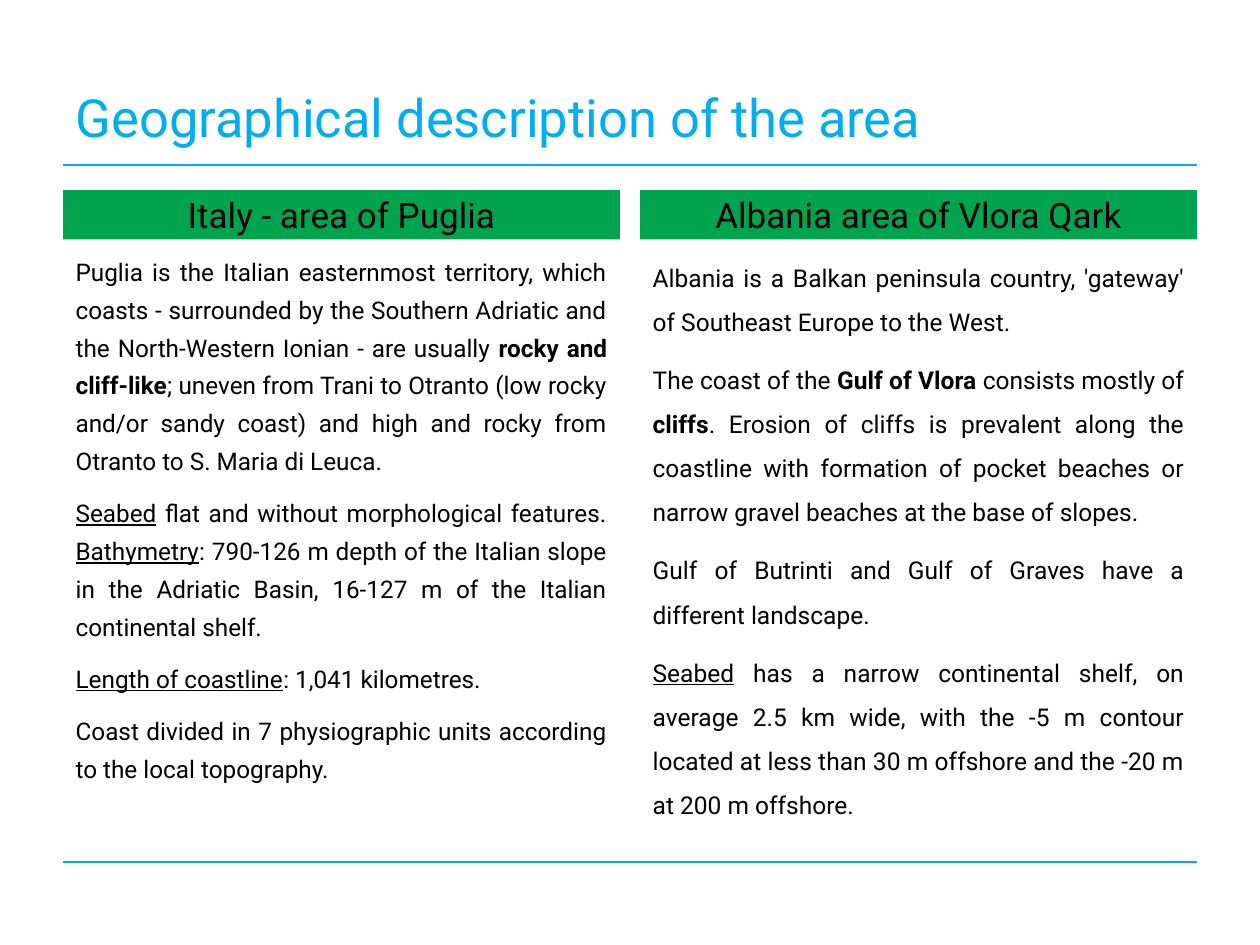
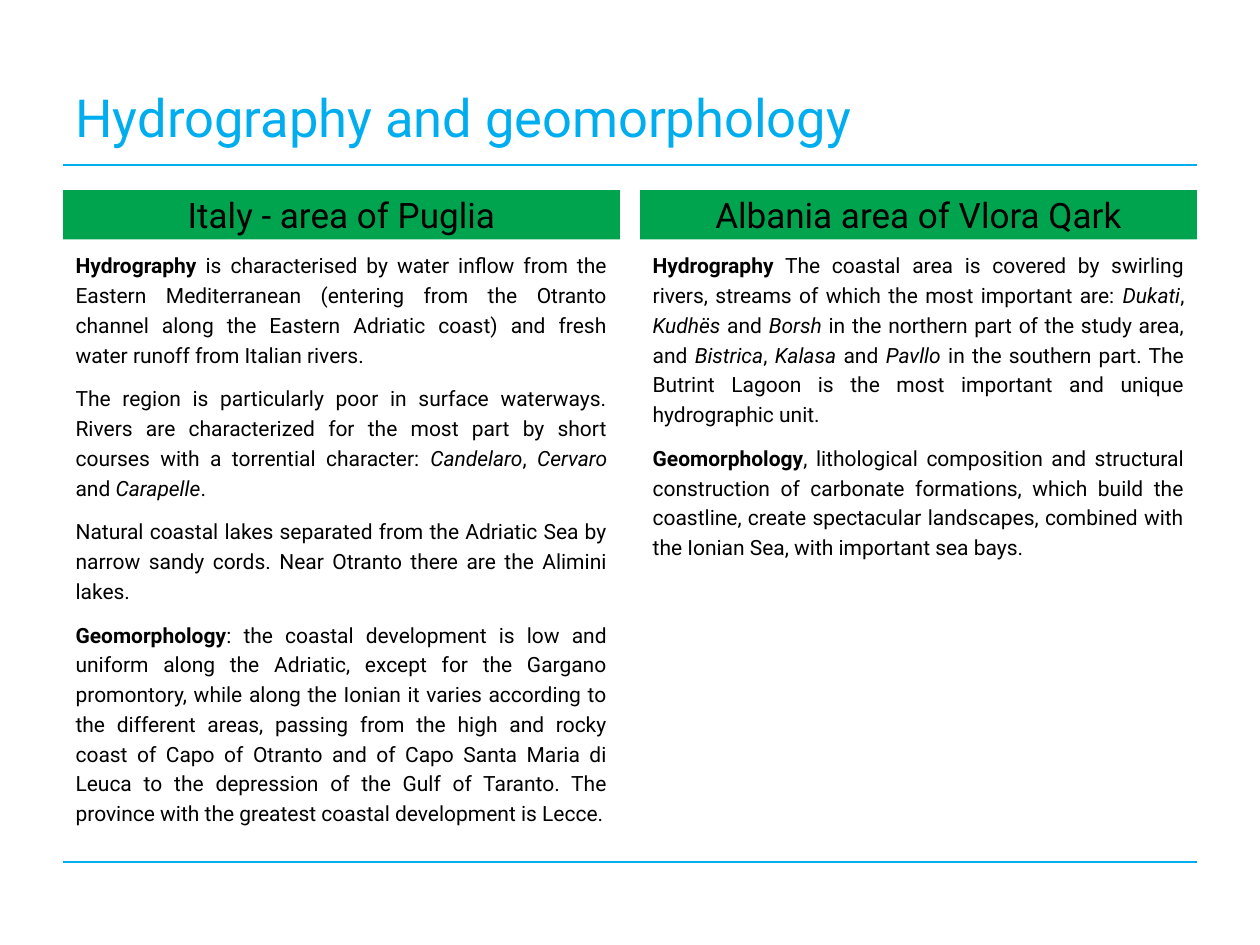
from pptx import Presentation
from pptx.dml.color import RGBColor
from pptx.enum.shapes import MSO_CONNECTOR
from pptx.enum.text import MSO_ANCHOR, MSO_AUTO_SIZE, PP_ALIGN
from pptx.util import Inches, Pt
from lxml import etree

STRAIGHT = MSO_CONNECTOR.STRAIGHT
TOP, MIDDLE = MSO_ANCHOR.TOP, MSO_ANCHOR.MIDDLE
LEFT, CENTER, JUSTIFY = PP_ALIGN.LEFT, PP_ALIGN.CENTER, PP_ALIGN.JUSTIFY
NO_FIT = MSO_AUTO_SIZE.NONE
DRAWING_NS = "{http://schemas.openxmlformats.org/drawingml/2006/main}"

# Shared look
FONT = "Roboto"
BLUE, GREEN, BLACK = "00AEEF", "00A44E", "000000"
SLIDE_W, SLIDE_H = 10, 7.5
MARGIN, GUTTER = 0.5, 0.16
CONTENT_W = SLIDE_W - 2 * MARGIN
COLUMN_W = (CONTENT_W - GUTTER) / 2
TITLE_TOP, TITLE_H = 0.3, 1.25
HEADING_TOP, HEADING_H = 1.51, 0.39
BODY_TOP, BODY_H = 1.92, 4.78
RULE_ROWS = (1.31, 6.84)
REGIONS = ("Italy - area of Puglia", "Albania area of Vlora Qark")

# Each column: text size, line spacing, paragraphs.
# Styled words stand between bars: |*bold|, |~italic|, |_underlined|
SLIDES = [
    ("Geographical description of the area", [
        (13.9, 1.3, [
            "Puglia is the Italian easternmost territory, which coasts - surrounded by the "
            "Southern Adriatic and the North-Western Ionian - are usually |*rocky and "
            "cliff-like|; uneven from Trani to Otranto (low rocky and/or sandy coast) and "
            "high and rocky from Otranto to S. Maria di Leuca.",
            "|_Seabed| flat and without morphological features. |_Bathymetry|: 790-126 m "
            "depth of the Italian slope in the Adriatic Basin, 16-127 m of the Italian "
            "continental shelf.",
            "|_Length of coastline|: 1,041 kilometres.",
            "Coast divided in 7 physiographic units according to the local topography.",
        ]),
        (14, 1.5, [
            "Albania is a Balkan peninsula country, 'gateway' of Southeast Europe to the West.",
            "The coast of the |*Gulf of Vlora| consists mostly of |*cliffs|. Erosion of "
            "cliffs is prevalent along the coastline with formation of pocket beaches or "
            "narrow gravel beaches at the base of slopes.",
            "Gulf of Butrinti and Gulf of Graves have a different landscape.",
            "|_Seabed| has a narrow continental shelf, on average 2.5 km wide, with the "
            "-5 m contour located at less than 30 m offshore and the -20 m at 200 m offshore.",
        ]),
    ]),
    ("Hydrography and geomorphology", [
        (12, Pt(17), [
            "|*Hydrography| is characterised by water inflow from the Eastern Mediterranean "
            "(entering from the Otranto channel along the Eastern Adriatic coast) and fresh "
            "water runoff from Italian rivers.",
            "The region is particularly poor in surface waterways. Rivers are characterized "
            "for the most part by short courses with a torrential character: |~Candelaro|, "
            "|~Cervaro| and |~Carapelle|.",
            "Natural coastal lakes separated from the Adriatic Sea by narrow sandy cords. "
            "Near Otranto there are the Alimini lakes.",
            "|*Geomorphology|: the coastal development is low and uniform along the "
            "Adriatic, except for the Gargano promontory, while along the Ionian it varies "
            "according to the different areas, passing from the high and rocky coast of "
            "Capo of Otranto and of Capo Santa Maria di Leuca to the depression of the Gulf "
            "of Taranto. The province with the greatest coastal development is Lecce.",
        ]),
        (12, Pt(17), [
            "|*Hydrography| The coastal area is covered by swirling rivers, streams of which "
            "the most important are: |~Dukati|, |~Kudhës| and |~Borsh| in the northern part "
            "of the study area, and |~Bistrica|, |~Kalasa| and |~Pavllo| in the southern "
            "part. The Butrint Lagoon is the most important and unique hydrographic unit.",
            "|*Geomorphology|, lithological composition and structural construction of "
            "carbonate formations, which build the coastline, create spectacular "
            "landscapes, combined with the Ionian Sea, with important sea bays.",
        ]),
    ]),
]


def rgb(hex_code):
    return RGBColor.from_string(hex_code)


def fill_placeholder(holder, box, paragraphs, size, color, align, anchor, spacing=1.0):
    """Place a template placeholder and write its marked-up paragraphs."""
    holder.left, holder.top, holder.width, holder.height = map(Inches, box)
    frame = holder.text_frame
    frame.auto_size, frame.word_wrap = NO_FIT, True
    frame.vertical_anchor = anchor
    for row, text in enumerate(paragraphs):
        paragraph = frame.paragraphs[0] if row == 0 else frame.add_paragraph()
        paragraph.alignment, paragraph.line_spacing = align, spacing
        paragraph.space_before = Pt(8 if row else 0)
        properties = paragraph._p.get_or_add_pPr()
        properties.set("marL", "0")
        properties.set("indent", "0")
        etree.SubElement(properties, DRAWING_NS + "buNone")
        paragraph.font.name, paragraph.font.size = FONT, Pt(size)
        paragraph.font.color.rgb = rgb(color)
        paragraph.font.bold = False
        for part, words in enumerate(text.split("|")):
            if not words:
                continue
            run = paragraph.add_run()
            run.text = words[1:] if part % 2 else words
            if part % 2:
                run.font.bold = words[0] == "*"
                run.font.italic = words[0] == "~"
                run.font.underline = words[0] == "_"


deck = Presentation()
deck.slide_width, deck.slide_height = Inches(SLIDE_W), Inches(SLIDE_H)
comparison = deck.slide_layouts.get_by_name("Comparison")

for title, columns in SLIDES:
    slide = deck.slides.add_slide(comparison)

    # Rules under the title and above the foot
    for y in RULE_ROWS:
        rule = slide.shapes.add_connector(
            STRAIGHT, Inches(MARGIN), Inches(y), Inches(MARGIN + CONTENT_W), Inches(y))
        rule.line.color.rgb, rule.line.width = rgb(BLUE), Pt(1)
        etree.SubElement(rule._element.spPr, DRAWING_NS + "effectLst")

    # Title
    fill_placeholder(slide.shapes.title, (MARGIN, TITLE_TOP, CONTENT_W, TITLE_H),
                     [title], 30, BLUE, LEFT, MIDDLE)

    # One column per region: green heading band, then text
    for index, (region, (size, spacing, paragraphs)) in enumerate(zip(REGIONS, columns)):
        x = MARGIN + index * (COLUMN_W + GUTTER)
        heading = slide.placeholders[1 + 2 * index]
        fill_placeholder(heading, (x, HEADING_TOP, COLUMN_W, HEADING_H),
                         [region], 20, BLACK, CENTER, MIDDLE)
        heading.fill.solid()
        heading.fill.fore_color.rgb = rgb(GREEN)
        fill_placeholder(slide.placeholders[2 + 2 * index],
                         (x, BODY_TOP, COLUMN_W, BODY_H),
                         paragraphs, size, BLACK, JUSTIFY, TOP, spacing)

deck.save("out.pptx")
